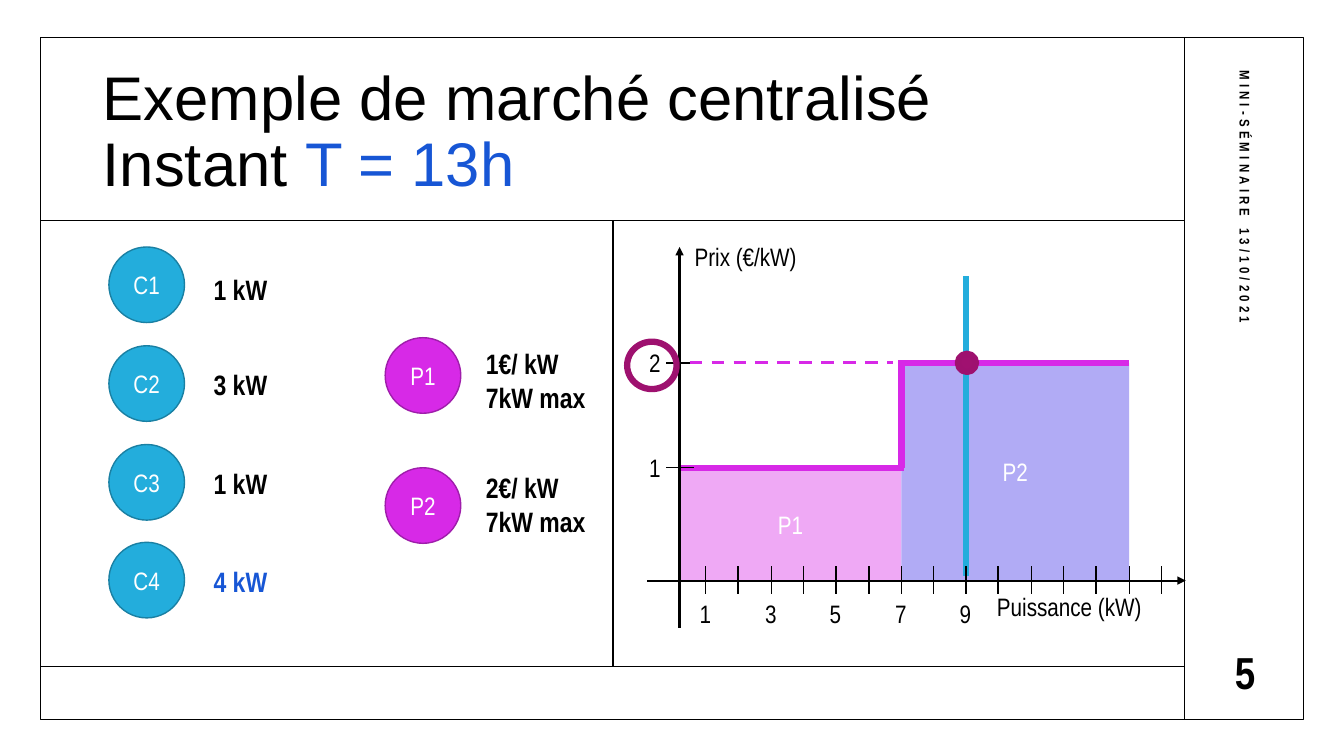
from dataclasses import dataclass
from typing import NamedTuple, Optional

from lxml import etree
from pptx import Presentation
from pptx.dml.color import RGBColor
from pptx.enum.dml import MSO_LINE
from pptx.enum.shapes import MSO_CONNECTOR, MSO_SHAPE
from pptx.enum.text import MSO_ANCHOR, MSO_AUTO_SIZE, PP_ALIGN
from pptx.oxml.ns import qn
from pptx.util import Emu, Pt

DASH = MSO_LINE.DASH
STRAIGHT = MSO_CONNECTOR.STRAIGHT
RECTANGLE, OVAL = MSO_SHAPE.RECTANGLE, MSO_SHAPE.OVAL
TOP, MIDDLE = MSO_ANCHOR.TOP, MSO_ANCHOR.MIDDLE
NO_AUTOFIT = MSO_AUTO_SIZE.NONE
LEFT, CENTER = PP_ALIGN.LEFT, PP_ALIGN.CENTER

EMU_PER_PX = 9144  # 100 px to the inch
TITLE_ONLY = 5


@dataclass(frozen=True)
class Theme:
    title_font: str = "Arial"
    body_font: str = "Arial Narrow"
    black: str = "000000"
    white: str = "FFFFFF"
    accent: str = "1756D5"
    consumer: str = "23ADDC"
    consumer_edge: str = "1A80A3"
    producer: str = "D729E7"
    producer_edge: str = "9F1EAB"
    area_p1: str = "EFA9F5"
    area_p2: str = "B1ABF5"
    clearing: str = "A01170"
    clearing_edge: str = "9E116F"
    title_size: int = 44
    number_size: int = 32
    value_size: int = 20
    label_size: int = 18
    sidebar_size: int = 10
    thin: float = 1
    axis: float = 1.5
    dash: float = 2.25
    thick: float = 4.5


THEME = Theme()


class Box(NamedTuple):
    left: int
    top: int
    width: int
    height: int


class Agent(NamedTuple):
    name: str
    circle_top: int
    text_top: int
    lines: tuple[str, ...]
    color: str = THEME.black


class AgentGroup(NamedTuple):
    circle_left: int
    text_left: int
    text_width: int
    text_height: int
    fill: str
    edge: str
    agents: tuple[Agent, ...]


CONSUMERS = AgentGroup(108, 202, 84, 44, THEME.consumer, THEME.consumer_edge, (
    Agent("C1", 245, 265, ("1 kW",)),
    Agent("C2", 343, 360, ("3 kW",)),
    Agent("C3", 441, 458, ("1 kW",)),
    Agent("C4", 538, 555, ("4 kW",), THEME.accent),
))
PRODUCERS = AgentGroup(382, 472, 135, 77, THEME.producer, THEME.producer_edge, (
    Agent("P1", 335, 339, ("1€/ kW", "7kW max")),
    Agent("P2", 464, 462, ("2€/ kW", "7kW max")),
))
CIRCLE = 75

# Chart scales
AXIS_X, AXIS_Y = 674, 576


def power_x(kilowatts: int) -> int:
    return round(668 + 32.25 * kilowatts)


def price_y(price: int) -> int:
    return 568 - 104 * price


def px(length: int) -> Emu:
    return Emu(length * EMU_PER_PX)


def rgb(color: str) -> RGBColor:
    return RGBColor.from_string(color)


def add_run(paragraph, text: str, size: int, color: str, bold: bool = False,
            font: str = THEME.body_font, spacing: int = 0) -> None:
    run = paragraph.add_run()
    run.text = text
    run.font.name, run.font.size, run.font.bold = font, Pt(size), bold
    run.font.color.rgb = rgb(color)
    if spacing:
        run._r.get_or_add_rPr().set("spc", str(spacing * 100))


def add_text(slide, box: Box, lines: tuple[str, ...], size: int, color: str = THEME.black,
             bold: bool = False, align=LEFT, anchor=TOP, wrap: bool = True, spacing: int = 0):
    shape = slide.shapes.add_textbox(*map(px, box))
    frame = shape.text_frame
    frame.word_wrap, frame.vertical_anchor = wrap, anchor
    for index, line in enumerate(lines):
        paragraph = frame.add_paragraph() if index else frame.paragraphs[0]
        paragraph.alignment = align
        add_run(paragraph, line, size, color, bold, spacing=spacing)
    return shape


def add_figure(slide, kind, box: Box, fill: Optional[str] = None, edge: Optional[str] = None,
               weight: float = THEME.thin, label: str = "") -> None:
    shape = slide.shapes.add_shape(kind, *map(px, box))
    shape.shadow.inherit = False
    if fill:
        shape.fill.solid()
        shape.fill.fore_color.rgb = rgb(fill)
    else:
        shape.fill.background()
    if edge:
        shape.line.color.rgb, shape.line.width = rgb(edge), Pt(weight)
    else:
        shape.line.fill.background()
    if label:
        shape.text_frame.vertical_anchor = MIDDLE
        paragraph = shape.text_frame.paragraphs[0]
        paragraph.alignment = CENTER
        add_run(paragraph, label, THEME.label_size, THEME.white)


def add_line(slide, start: tuple[int, int], end: tuple[int, int], color: str = THEME.black,
             weight: float = THEME.thin, dashed: bool = False, arrow: bool = False) -> None:
    connector = slide.shapes.add_connector(STRAIGHT, *map(px, start + end))
    connector.line.color.rgb, connector.line.width = rgb(color), Pt(weight)
    if dashed:
        connector.line.dash_style = DASH
    if arrow:
        etree.SubElement(connector.line._get_or_add_ln(), qn("a:tailEnd"), type="triangle")
    etree.SubElement(connector._element.spPr, qn("a:effectLst"))


def add_frame(slide) -> None:
    add_figure(slide, RECTANGLE, Box(40, 37, 1253, 677), edge=THEME.black)
    add_line(slide, (1175, 37), (1175, 713))
    add_line(slide, (41, 661), (1175, 661))
    add_line(slide, (41, 219), (1175, 219))
    add_line(slide, (608, 219), (608, 661))
    sidebar = add_text(slide, Box(1010, 265, 450, 40), ("MINI-SÉMINAIRE 13/10/2021",),
                       THEME.sidebar_size, bold=True, anchor=MIDDLE, spacing=3)
    sidebar.rotation = 90
    add_text(slide, Box(1183, 643, 104, 46), ("5",), THEME.number_size, bold=True,
             align=CENTER, anchor=MIDDLE, spacing=3)


def add_title(slide) -> None:
    title = slide.shapes.title
    title.left, title.top, title.width, title.height = map(px, Box(92, 60, 1059, 145))
    frame = title.text_frame
    frame.auto_size, frame.word_wrap, frame.vertical_anchor = NO_AUTOFIT, True, MIDDLE
    paragraph = frame.paragraphs[0]
    paragraph.alignment, paragraph.line_spacing = LEFT, 0.9
    size, font = THEME.title_size, THEME.title_font
    add_run(paragraph, "Exemple de marché centralisé", size, THEME.black, font=font)
    paragraph.add_line_break()
    add_run(paragraph, "Instant ", size, THEME.black, font=font)
    add_run(paragraph, "T = 13h", size, THEME.accent, font=font)


def add_agents(slide, group: AgentGroup) -> None:
    for agent in group.agents:
        add_figure(slide, OVAL, Box(group.circle_left, agent.circle_top, CIRCLE, CIRCLE),
                   group.fill, group.edge, label=agent.name)
        add_text(slide, Box(group.text_left, agent.text_top, group.text_width, group.text_height),
                 agent.lines, THEME.value_size, agent.color, bold=True)


def add_chart_label(slide, box: Box, text: str) -> None:
    add_text(slide, box, (text,), THEME.label_size, wrap=False)


def add_market_chart(slide) -> None:
    step, end, demand = power_x(7), power_x(14), power_x(9)
    low, high = price_y(1), price_y(2)
    # Supply areas and supply curve
    add_figure(slide, RECTANGLE, Box(AXIS_X, low, step - AXIS_X, AXIS_Y - low),
               THEME.area_p1, label="P1")
    add_figure(slide, RECTANGLE, Box(step, high, end - step, AXIS_Y - high),
               THEME.area_p2, label="P2")
    for start, stop in (((AXIS_X, low), (step + 3, low)), ((step, low), (step, high)),
                        ((step - 3, high), (end, high))):
        add_line(slide, start, stop, THEME.producer, THEME.thick)
    # Demand
    add_line(slide, (demand, 274), (demand, 571), THEME.consumer, THEME.thick)
    # Axes, ticks and labels
    add_line(slide, (AXIS_X, 623), (AXIS_X, 245), weight=THEME.axis, arrow=True)
    add_line(slide, (642, AXIS_Y), (1176, AXIS_Y), weight=THEME.axis, arrow=True)
    add_chart_label(slide, Box(679, 234, 131, 40), "Prix (€/kW)")
    add_chart_label(slide, Box(979, 582, 186, 40), "Puissance (kW)")
    for power in range(1, 16):
        add_line(slide, (power_x(power), 562), (power_x(power), 589))
    for power in range(1, 10, 2):
        add_chart_label(slide, Box(power_x(power) - 16, 589, 31, 40), str(power))
    for price in (1, 2):
        add_line(slide, (661, price_y(price)), (688, price_y(price)))
        add_chart_label(slide, Box(634, price_y(price) - 20, 31, 40), str(price))
    # Clearing price
    add_figure(slide, OVAL, Box(622, 339, 49, 47), edge=THEME.clearing_edge, weight=THEME.thick)
    add_line(slide, (684, high), (886, high), THEME.producer, THEME.dash, dashed=True)
    add_figure(slide, OVAL, Box(demand + 1 - 9, high - 9, 18, 18),
               THEME.clearing, THEME.clearing_edge, THEME.thick)


def main() -> None:
    presentation = Presentation()
    presentation.slide_width, presentation.slide_height = px(1333), px(750)
    slide = presentation.slides.add_slide(presentation.slide_layouts[TITLE_ONLY])
    add_frame(slide)
    add_title(slide)
    for group in (CONSUMERS, PRODUCERS):
        add_agents(slide, group)
    add_market_chart(slide)
    presentation.save("out.pptx")


if __name__ == "__main__":
    main()
